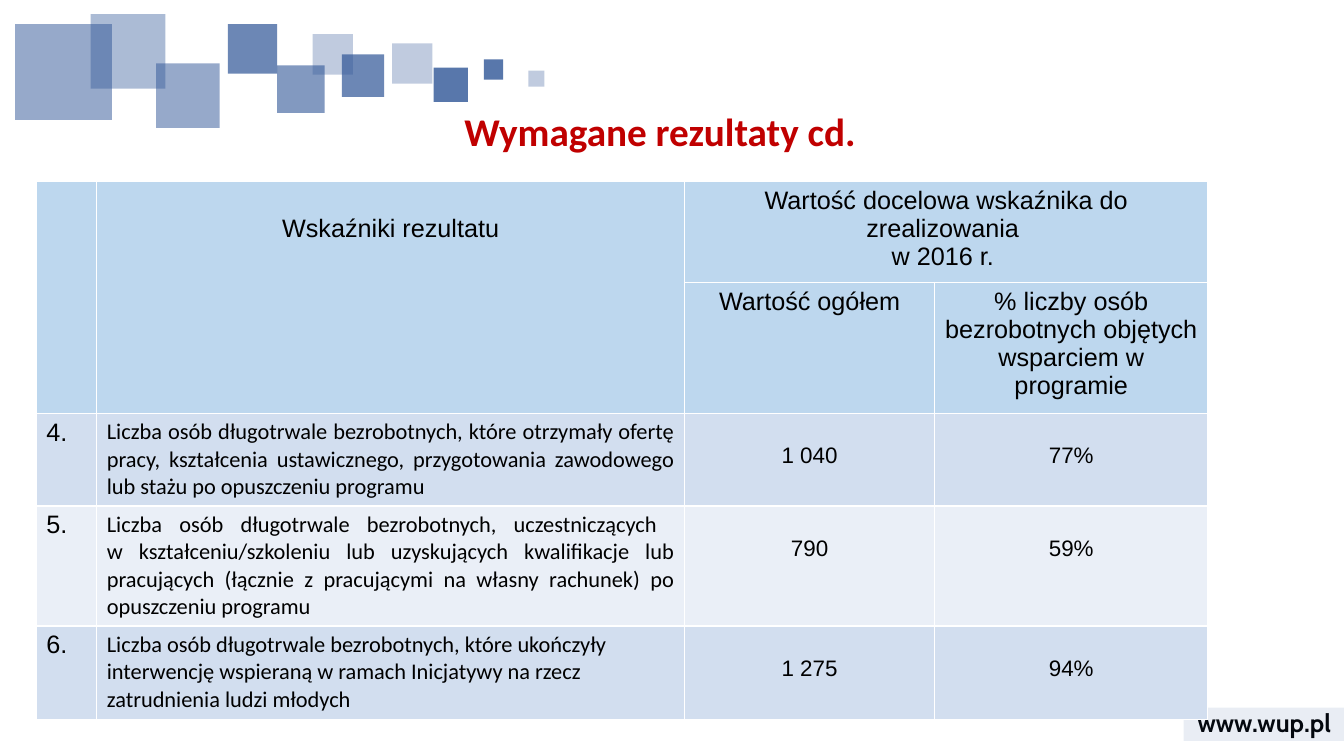
import pptx
import pptx.util
import pptx.dml.color
import pptx.enum.text
import pptx.enum.shapes
import pptx.oxml
from pptx.oxml.ns import qn

HUES = {"blue": "2F5597", "red": "C00000", "ink": "000000", "head": "BDD7EE",
        "dark": "D2DEEF", "pale": "EAEFF7", "line": "FFFFFF"}
TITLE = "Wymagane rezultaty cd."
SITE = "www.wup.pl"
HEAD = [
    (0, 1, "Wskaźniki rezultatu", 0.33),
    (0, 2, "Wartość docelowa wskaźnika do zrealizowania \vw 2016 r. ", 0.05),
    (1, 2, "Wartość ogółem", 0.05),
    (1, 3, "% liczby osób bezrobotnych objętych wsparciem w programie", 0.05),
]
GOALS = [
    ("4.", "Liczba osób długotrwale bezrobotnych, które otrzymały ofertę pracy, "
     "kształcenia ustawicznego, przygotowania zawodowego lub stażu po opuszczeniu programu",
     "1 040", "77%", "just"),
    ("5.", "Liczba osób długotrwale bezrobotnych, uczestniczących \vw kształceniu/szkoleniu "
     "lub uzyskujących kwalifikacje lub pracujących (łącznie z pracującymi na własny rachunek) "
     "po opuszczeniu programu ", "790", "59%", "just"),
    ("6.", "Liczba osób długotrwale bezrobotnych, które ukończyły interwencję wspieraną "
     "w ramach Inicjatywy na rzecz zatrudnienia ludzi młodych", "1 275", "94%", "left"),
]
COLS = [0.6, 5.83, 2.48, 2.71]
ROWS = [0.93, 1.22, 0.92, 1.19, 0.93]
TILES = [
    (3.89, 0.43, 0.4, 0.4, 30), (4.3, 0.67, 0.34, 0.34, 80), (3.39, 0.54, 0.42, 0.42, 70),
    (0.15, 0.24, 0.96, 0.95, 50), (2.75, 0.65, 0.47, 0.47, 60), (1.55, 0.63, 0.63, 0.64, 50),
    (0.9, 0.14, 0.74, 0.74, 40), (4.8, 0.59, 0.19, 0.2, 80), (2.26, 0.24, 0.49, 0.49, 70),
    (3.1, 0.34, 0.4, 0.4, 30), (5.24, 0.7, 0.16, 0.16, 30), (11.74, 7.02, 1.6, 0.33, 10),
]
ALIGN = {"left": pptx.enum.text.PP_ALIGN.LEFT, "mid": pptx.enum.text.PP_ALIGN.CENTER,
         "just": pptx.enum.text.PP_ALIGN.JUSTIFY}
inch = pptx.util.Inches


def hue(name):
    return pptx.dml.color.RGBColor.from_string(HUES[name])


def write(frame, text, size, face, align="mid", color="ink", bold=False):
    para = frame.paragraphs[0]
    para.text = text
    para.alignment = ALIGN[align]
    for run in para.runs:
        run.font.size = pptx.util.Pt(size)
        run.font.name = face
        run.font.bold = bold
        run.font.color.rgb = hue(color)
    for gap in para._p.findall(qn("a:br")):
        gap.get_or_add_rPr().set("sz", str(size * 100)) if hasattr(gap, "get_or_add_rPr") \
            else gap.makeelement(qn("a:rPr"), {"sz": str(size * 100)}) is not None \
            and gap.insert(0, gap.makeelement(qn("a:rPr"), {"sz": str(size * 100)}))
    return para


def label(slide, box, *args, **more):
    frame = slide.shapes.add_textbox(*map(inch, box)).text_frame
    frame.word_wrap = True
    return frame, write(frame, *args, **more)


def tile(slide, left, top, wide, high, alpha):
    shape = slide.shapes.add_shape(pptx.enum.shapes.MSO_SHAPE.RECTANGLE,
                                   *map(inch, (left, top, wide, high)))
    shape.shadow.inherit = False
    shape.line.fill.background()
    shape.fill.solid()
    shape.fill.fore_color.rgb = hue("blue")
    tint = shape._element.spPr.find(".//" + qn("a:srgbClr"))
    tint.append(tint.makeelement(qn("a:alpha"), {"val": str(alpha * 1000)}))


def paint(cell, color):
    cell.fill.solid()
    cell.fill.fore_color.rgb = hue(color)
    props = cell._tc.get_or_add_tcPr()
    for place, side in enumerate("LRTB"):
        props.insert(place, pptx.oxml.parse_xml(
            f'<a:ln{side} xmlns:a="http://schemas.openxmlformats.org/drawingml/2006/main" '
            f'w="12700"><a:solidFill><a:srgbClr val="{HUES["line"]}"/></a:solidFill></a:ln{side}>'))


def grid(slide):
    table = slide.shapes.add_table(len(ROWS), len(COLS), inch(0.36), inch(1.8),
                                   inch(sum(COLS)), inch(sum(ROWS))).table
    table.first_row = table.horz_banding = False
    for col, wide in zip(table.columns, COLS):
        col.width = inch(wide)
    for r, high in enumerate(ROWS):
        table.rows[r].height = inch(high)
        color = "head" if r < 2 else ("dark", "pale")[r % 2]
        for c in range(len(COLS)):
            paint(table.cell(r, c), color)
    for c in (0, 1):
        table.cell(0, c).merge(table.cell(1, c))
    table.cell(0, 2).merge(table.cell(0, 3))
    for r, c, text, top in HEAD:
        table.cell(r, c).margin_top = inch(top)
        write(table.cell(r, c).text_frame, text, 18, "Arial")
    for r, (mark, goal, count, share, align) in enumerate(GOALS, 2):
        write(table.cell(r, 0).text_frame, mark, 18, "Arial", "left")
        write(table.cell(r, 1).text_frame, goal, 16, "Calibri", align)
        for c, text in ((2, count), (3, share)):
            table.cell(r, c).margin_top = inch(0.3)
            write(table.cell(r, c).text_frame, text, 16, "Arial")


def main():
    deck = pptx.Presentation()
    deck.slide_width, deck.slide_height = inch(13.33), inch(7.5)
    slide = deck.slides.add_slide(deck.slide_layouts[6])
    frame, para = label(slide, (11.74, 6.97, 1.6, 0.4), SITE, 18, "Cabin", bold=True)
    frame.vertical_anchor = pptx.enum.text.MSO_ANCHOR.MIDDLE
    for spot in TILES:
        tile(slide, *spot)
    frame, para = label(slide, (0.34, 1.07, 12.41, 0.69), TITLE, 28, "Calibri",
                        color="red", bold=True)
    para.line_spacing = 0.9
    grid(slide)
    deck.save("out.pptx")


if __name__ == "__main__":
    main()
